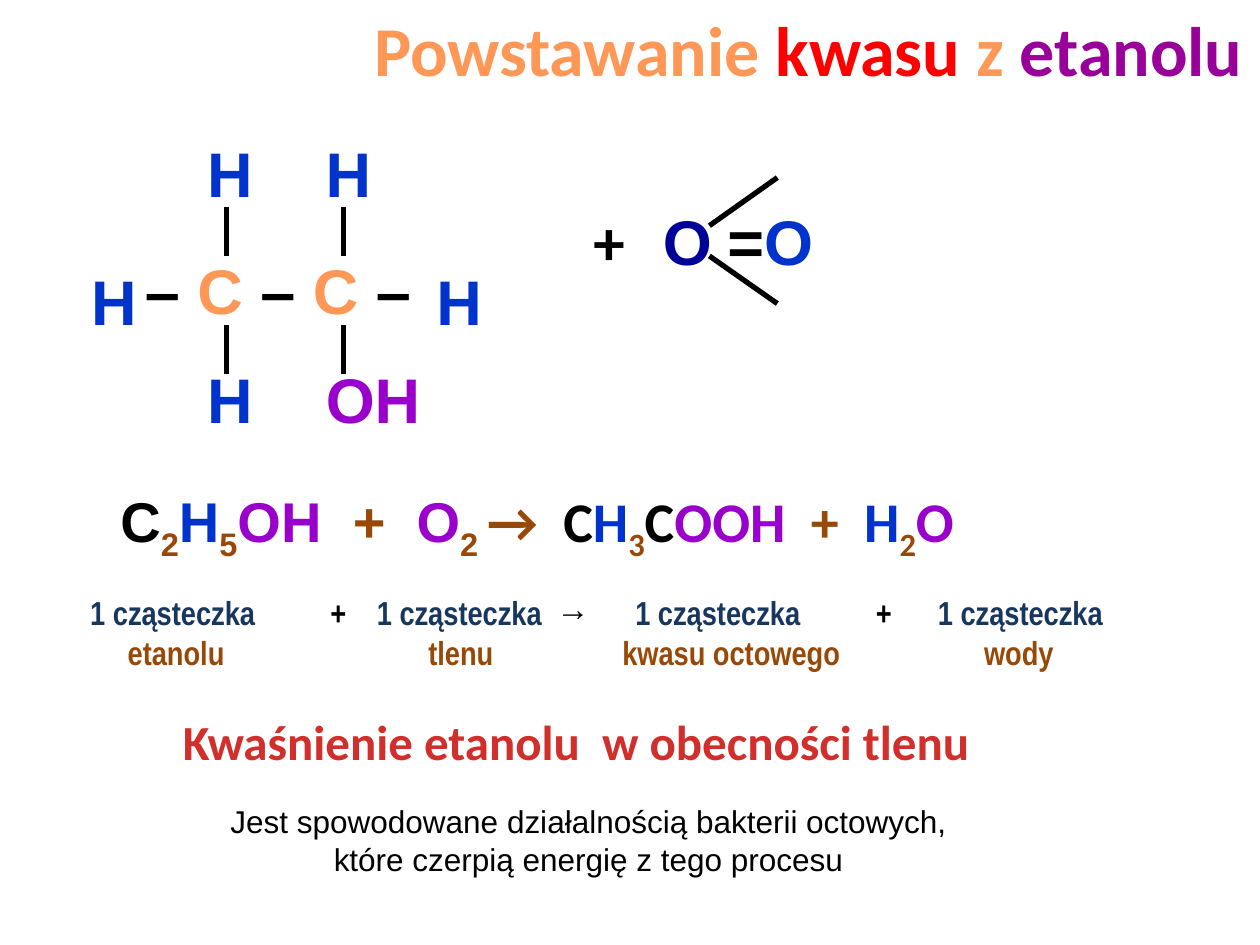
from dataclasses import dataclass
from typing import Optional

from lxml.etree import SubElement
from pptx import Presentation
from pptx.dml.color import RGBColor
from pptx.enum.shapes import MSO_CONNECTOR as Connector, MSO_SHAPE as Preset
from pptx.enum.text import MSO_AUTO_SIZE as AutoSize, MSO_VERTICAL_ANCHOR as Anchor, PP_ALIGN as Align
from pptx.oxml.ns import qn
from pptx.util import Cm, Pt

COLORS = {
    "black": "000000", "white": "FFFFFF", "orange": "FF9856", "red": "FF0000",
    "plum": "990099", "blue": "0033CC", "navy": "000099", "violet": "9900CC",
    "brown": "984807", "steel": "17375E", "crimson": "D02F2C",
}


@dataclass
class Run:
    text: str
    color: str = "black"
    subscript: bool = False
    font: Optional[str] = None


@dataclass
class Atom:
    symbol: str
    left: float
    top: float
    width: float = 1.45
    color: str = "blue"
    font: str = "Arial"


@dataclass
class Bond:
    x1: float
    y1: float
    x2: float
    y2: float


def rgb(name: str) -> RGBColor:
    return RGBColor.from_string(COLORS[name])


def add_tabs(paragraph, positions) -> None:
    tab_list = SubElement(paragraph._p.get_or_add_pPr(), qn("a:tabLst"))
    for position in positions:
        SubElement(tab_list, qn("a:tab"), pos=str(Cm(position)), algn="ctr")


def add_text(slide, lines, left, top, width, height, *, size, font="Arial", bold=True,
             align=Align.CENTER, wrap=False, fill=None, insets=None, tabs=()):
    box = (Cm(left), Cm(top), Cm(width), Cm(height))
    if fill:
        shape = slide.shapes.add_shape(Preset.RECTANGLE, *box)
        shape.shadow.inherit = False
        shape.fill.solid()
        shape.fill.fore_color.rgb = rgb(fill)
        shape.line.fill.background()
    else:
        shape = slide.shapes.add_textbox(*box)
    frame = shape.text_frame
    frame.word_wrap = wrap
    frame.auto_size = AutoSize.SHAPE_TO_FIT_TEXT
    frame.vertical_anchor = Anchor.TOP
    if insets:
        frame.margin_left, frame.margin_right = (Cm(inset) for inset in insets)
    for index, line in enumerate(lines):
        paragraph = frame.add_paragraph() if index else frame.paragraphs[0]
        paragraph.alignment = align
        if tabs:
            add_tabs(paragraph, tabs[index])
        for part in line:
            run = paragraph.add_run()
            run.text = part.text
            run.font.name = part.font or font
            run.font.size = Pt(size)
            run.font.bold = bold
            run.font.color.rgb = rgb(part.color)
            if part.subscript:
                run._r.get_or_add_rPr().set("baseline", "-25000")
    return shape


def add_atom(slide, atom: Atom) -> None:
    add_text(slide, [[Run(atom.symbol, atom.color)]], atom.left, atom.top, atom.width, 1.8,
             size=36, font=atom.font)


def add_bond(slide, bond: Bond) -> None:
    line = slide.shapes.add_connector(
        Connector.STRAIGHT, Cm(bond.x1), Cm(bond.y1), Cm(bond.x2), Cm(bond.y2))
    line.line.color.rgb = rgb("black")
    line.line.width = Pt(3)
    SubElement(line._element.spPr, qn("a:effectLst"))


def add_molecules(slide) -> None:
    dash, carbon = Run("– "), Run("C ", "orange")
    add_text(slide, [[dash, carbon, dash, carbon, Run("–")]], 1.57, 4.95, 7.34, 1.8,
             size=36, align=Align.LEFT, wrap=True, insets=(1.35, 0))
    atoms = [
        Atom("H", 3.91, 2.59), Atom("H", 6.3, 2.59),
        Atom("H", 3.91, 7.14), Atom("OH", 6.3, 7.14, 2.44, "violet"),
        Atom("H", 1.57, 5.16), Atom("H", 8.53, 5.16),
        Atom("+", 11.71, 3.96, 1.14, "black", "Calibri"),
        Atom("O", 13.11, 3.96, 1.5, "navy"),
    ]
    for atom in atoms:
        add_atom(slide, atom)
    add_text(slide, [[Run("="), Run("O", "blue")]], 14.4, 3.96, 2.26, 1.8,
             size=36, fill="white")
    bonds = [Bond(x, y, x, y + 0.99) for x in (4.57, 6.93) for y in (4.17, 6.55)]
    bonds += [Bond(14.3, 5.16, 15.67, 6.12), Bond(15.67, 3.58, 14.3, 4.55)]
    for bond in bonds:
        add_bond(slide, bond)


def add_equation(slide) -> None:
    ethanol_and_oxygen = [
        Run("C"), Run("2", "brown", True), Run("H", "blue"), Run("5", "brown", True),
        Run("OH  ", "violet"), Run("+  ", "brown"), Run("O", "violet"),
        Run("2 ", "brown", True),
    ]
    acid_and_water = [
        Run("→", "brown"), Run("  C"), Run("H", "blue"), Run("3", "brown", True),
        Run("C"), Run("OOH  ", "violet"), Run("+  ", "brown"), Run("H", "blue"),
        Run("2", "brown", True), Run("O", "violet"),
    ]
    for part in acid_and_water:
        part.font = "Calibri"
    add_text(slide, [ethanol_and_oxygen + acid_and_water], 2.18, 9.68, 17.83, 1.63,
             size=32, align=Align.LEFT)

    molecule = "1 cząsteczka"
    counts = [Run(molecule, "steel")]
    for sign in ("+", "→", "+"):
        counts += [Run(f"\t{sign}"), Run(f"\t{molecule}", "steel")]
    names = [Run(f"\t{name}", "brown") for name in ("etanolu", "tlenu", "kwasu octowego", "wody")]
    add_text(slide, [counts, names], 1.57, 11.81, 21.5, 1.88, size=19, font="Arial Narrow",
             align=Align.LEFT, wrap=True,
             tabs=[(5, 7.44, 9.73, 12.65, 16, 18.75), (1.73, 7.47, 12.92, 18.72)])


def main() -> None:
    presentation = Presentation()
    presentation.slide_width, presentation.slide_height = Cm(25.4), Cm(19.05)
    slide = presentation.slides.add_slide(presentation.slide_layouts[6])
    title = [Run("Powstawanie ", "orange"), Run("kwasu", "red"),
             Run(" z ", "orange"), Run("etanolu", "plum")]
    add_text(slide, [title], 7.19, 0, 18.21, 1.96, size=40, font="Calibri")
    add_molecules(slide)
    add_equation(slide)
    add_text(slide, [[Run("Kwaśnienie etanolu  w obecności tlenu", "crimson")]],
             3.38, 14.22, 16.46, 1.45, size=28, font="Calibri")
    add_text(slide, [[Run("Jest spowodowane działalnością bakterii octowych,")],
                     [Run("które czerpią energię z tego procesu")]],
             4.18, 16.05, 15.37, 1.8, size=18, bold=False)
    presentation.save("out.pptx")


if __name__ == "__main__":
    main()
